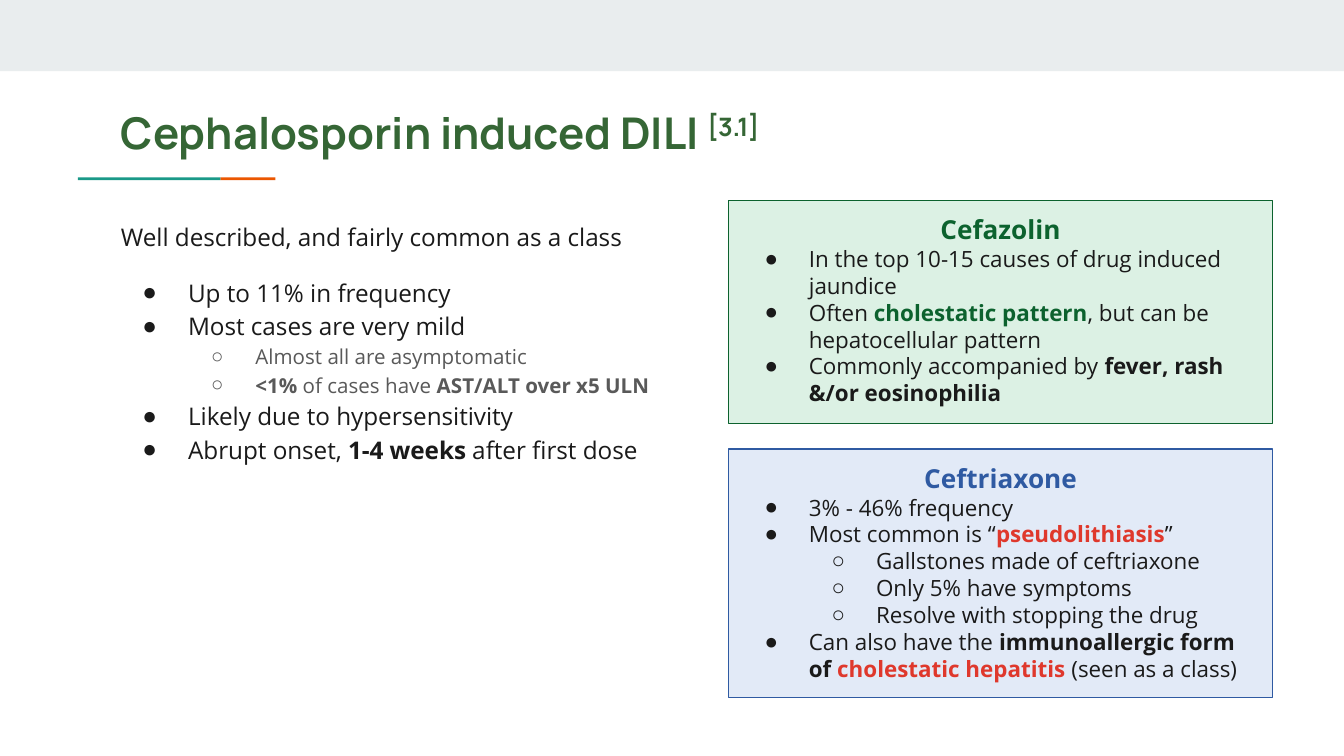
"""Build the slide on cephalosporin induced liver injury."""
import pptx
import pptx.dml.color
import pptx.enum.shapes
import pptx.enum.text
import pptx.oxml.ns
import pptx.util
from lxml import etree

Inches, Pt = pptx.util.Inches, pptx.util.Pt
ALIGN = pptx.enum.text.PP_ALIGN

INK, GREY, RED = "1A1A1A", "595959", "DF382C"
GREEN, BLUE, TITLE_GREEN = "0C622E", "2F5AA2", "356635"
TITLE = ("Cephalosporin induced DILI ", "[3.1]")
BULLETS = {1: "●", 2: "○"}

OVERVIEW = [
    (0, ["Well described, and fairly common as a class"]),
    (1, ["Up to 11% in frequency"]),
    (1, ["Most cases are very mild"]),
    (2, ["Almost all are asymptomatic"]),
    (2, [("<1%",), " of cases have ", ("AST/ALT over x5 ULN",)]),
    (1, ["Likely due to hypersensitivity"]),
    (1, ["Abrupt onset, ", ("1-4 weeks",), " after first dose"]),
]
DRUGS = [
    {"name": "Ceftriaxone", "top": 3.34, "height": 1.85, "fill": "E2EAF7", "accent": BLUE,
     "facts": [
         (1, ["3% - 46% frequency"]),
         (1, ["Most common is “", ("pseudolithiasis", RED), "”"]),
         (2, ["Gallstones made of ceftriaxone"]),
         (2, ["Only 5% have symptoms"]),
         (2, ["Resolve with stopping the drug"]),
         (1, ["Can also have the ", ("immunoallergic form of ",),
              ("cholestatic hepatitis", RED), " (seen as a class)"]),
     ]},
    {"name": "Cefazolin", "top": 1.49, "height": 1.66, "fill": "DCF1E4", "accent": GREEN,
     "facts": [
         (1, ["In the top 10-15 causes of drug induced jaundice"]),
         (1, ["Often ", ("cholestatic pattern", GREEN), ", but can be hepatocellular pattern"]),
         (1, ["Commonly accompanied by ", ("fever, rash &/or eosinophilia",)]),
     ]},
]
BANDS = [(0, 0, 10, 0.53, "E9EDEE"), (1.64, 1.32, 0.41, 0.02, "EB5600"),
         (0.58, 1.32, 1.06, 0.02, "1A9988")]


def color(value):
    return pptx.dml.color.RGBColor.from_string(value)


def add_box(left, top, width, height, fill, line=None):
    box = slide.shapes.add_shape(pptx.enum.shapes.MSO_SHAPE.RECTANGLE,
                                 *map(Inches, (left, top, width, height)))
    box.shadow.inherit = False
    box.fill.solid()
    box.fill.fore_color.rgb = color(fill)
    if line:
        box.line.color.rgb = color(line)
        box.line.width = Pt(0.75)
    else:
        box.line.fill.background()
    return box


def place(shape, left, top, width, height):
    shape.left, shape.top, shape.width, shape.height = map(Inches, (left, top, width, height))


def set_frame(frame):
    frame.word_wrap = True
    frame.auto_size = pptx.enum.text.MSO_AUTO_SIZE.NONE
    frame.vertical_anchor = pptx.enum.text.MSO_ANCHOR.TOP
    frame.margin_left = frame.margin_right = frame.margin_top = frame.margin_bottom = Inches(0.1)


def add_run(paragraph, text, size, ink, bold=False, font="Open Sans"):
    run = paragraph.add_run()
    run.text = text
    run.font.name, run.font.size, run.font.bold = font, Pt(size), bold
    run.font.color.rgb = color(ink)
    return run


def set_bullet(paragraph, depth, hang, ink):
    properties = paragraph._p.get_or_add_pPr()
    properties.set("marL", str(Inches(0.5 * depth)))
    properties.set("indent", str(-Inches(hang) if depth else 0))
    if depth:
        properties.set("lvl", str(depth - 1))
        bullet_color = etree.SubElement(properties, pptx.oxml.ns.qn("a:buClr"))
        etree.SubElement(bullet_color, pptx.oxml.ns.qn("a:srgbClr"), val=ink)
        etree.SubElement(properties, pptx.oxml.ns.qn("a:buFont"), typeface="Arial")
        etree.SubElement(properties, pptx.oxml.ns.qn("a:buChar"), char=BULLETS[depth])
    else:
        etree.SubElement(properties, pptx.oxml.ns.qn("a:buNone"))


def write_item(paragraph, depth, runs, size, ink, hang, spacing):
    set_bullet(paragraph, depth, hang, ink)
    paragraph.alignment = ALIGN.LEFT
    paragraph.line_spacing = spacing
    paragraph.space_before = Pt(0)
    for run in runs:
        text, *accent = (run,) if isinstance(run, str) else run
        add_run(paragraph, text, size, accent[0] if accent else ink, not isinstance(run, str))


deck = pptx.Presentation()
deck.slide_width, deck.slide_height = Inches(10), Inches(10 * 9 / 16)
slide = deck.slides.add_slide(deck.slide_layouts[1])

for band in BANDS:
    add_box(*band)

title = slide.shapes.title
place(title, 0.8, 0.69, 8.41, 0.59)
set_frame(title.text_frame)
heading = title.text_frame.paragraphs[0]
heading.alignment = ALIGN.LEFT
for part in TITLE:
    citation = add_run(heading, part, 23.4, TITLE_GREEN, True, "Manrope")
citation._r.get_or_add_rPr().set("baseline", "30000")

overview = slide.placeholders[1]
place(overview, 0.8, 1.52, 4.51, 2.08)
set_frame(overview.text_frame)
for index, (depth, runs) in enumerate(OVERVIEW):
    item = overview.text_frame.paragraphs[0] if index == 0 else overview.text_frame.add_paragraph()
    size, ink, hang = (11, GREY, 0.33) if depth == 2 else (13, INK, 0.34)
    write_item(item, depth, runs, size, ink, hang, 1.15)
    if index == 1:
        item.space_before = Pt(12)

for drug in DRUGS:
    card = add_box(5.42, drug["top"], 4.05, drug["height"], drug["fill"], drug["accent"])
    set_frame(card.text_frame)
    name = card.text_frame.paragraphs[0]
    name.alignment = ALIGN.CENTER
    add_run(name, drug["name"], 14, drug["accent"], True)
    for depth, runs in drug["facts"]:
        write_item(card.text_frame.add_paragraph(), depth, runs, 12, INK, 0.33, 1.0)

deck.save("out.pptx")
